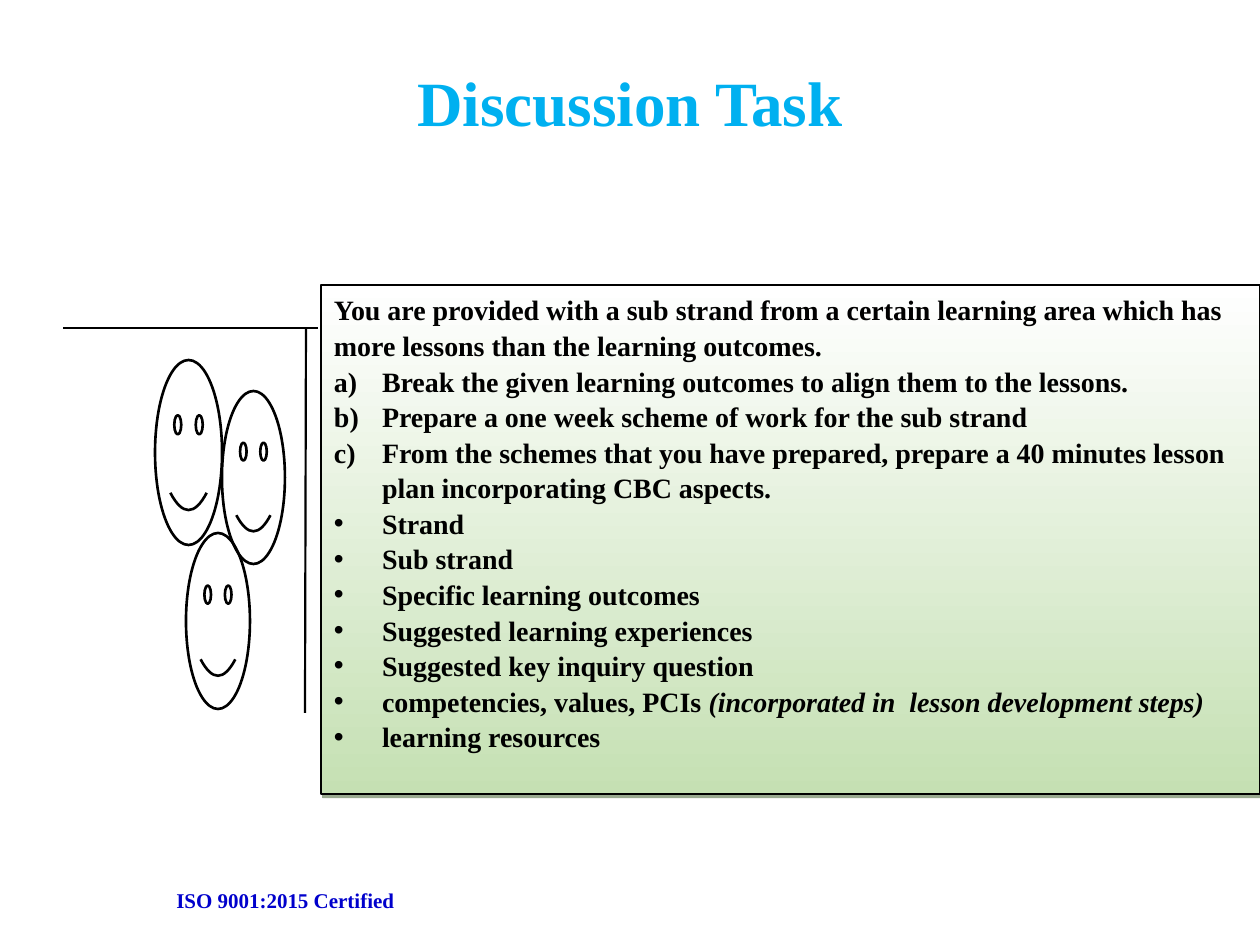
from lxml import etree
from pptx import Presentation
from pptx import util as u
from pptx.dml.color import RGBColor
from pptx.enum import shapes, text
from pptx.oxml.ns import qn

SCALE = 914400 / 126
BLACK = "000000"
TASKS = [
    "Break the given learning outcomes to align them to the lessons.",
    "Prepare a one week scheme of work for the sub strand",
    "From the schemes that you have prepared, prepare a 40 minutes lesson plan incorporating CBC aspects.",
]
PLAN_PARTS = [
    "Strand",
    "Sub strand",
    "Specific learning outcomes",
    "Suggested learning experiences",
    "Suggested key inquiry question",
    ("competencies, values, PCIs ", "(incorporated in  lesson development steps)"),
    "learning resources",
]
FACES = [(155, 360, 67, 185), (222, 391, 63, 173), (186, 533, 64, 176)]
EASEL_LINES = [(306, 328, 305, 713), (318, 328, 63, 328)]


def px(*lengths):
    return [u.Emu(round(length * SCALE)) for length in lengths]


def color(value):
    return RGBColor.from_string(value)


def apply(target, values):
    for name, value in values.items():
        setattr(target, name, value)


class Page:
    def __init__(self, deck):
        self.page = deck.slides.add_slide(deck.slide_layouts[5])
        self.font = {"name": "Times New Roman", "bold": True}

    def add_span(self, para, words, size, ink=BLACK, italic=False):
        span = para.add_run()
        span.text = words
        apply(span.font, {**self.font, "size": u.Pt(size), "italic": italic})
        span.font.color.rgb = color(ink)

    def title(self, words, place):
        box = self.page.shapes.title
        apply(box, dict(zip(("left", "top", "width", "height"), px(*place))))
        box.text_frame.vertical_anchor = text.MSO_ANCHOR.MIDDLE
        para = box.text_frame.paragraphs[0]
        para.alignment = text.PP_ALIGN.CENTER
        self.add_span(para, words, 36, "00B0F0")

    def label(self, words, place):
        box = self.page.shapes.add_textbox(*px(*place))
        box.text_frame.word_wrap = True
        self.add_span(box.text_frame.paragraphs[0], words, 12, "0000CC")

    def shape(self, kind, place, width):
        shape = self.page.shapes.add_shape(kind, *px(*place))
        shape.shadow.inherit = False
        shape.line.color.rgb = color(BLACK)
        shape.line.width = u.Pt(width)
        return shape

    def face(self, place):
        face = self.shape(shapes.MSO_SHAPE.SMILEY_FACE, place, 1.5)
        face.fill.background()
        face.adjustments[0] = 0.05

    def line(self, ends):
        line = self.page.shapes.add_connector(shapes.MSO_CONNECTOR.STRAIGHT, *px(*ends))
        line.line.color.rgb = color(BLACK)
        line.line.width = u.Pt(1.25)
        etree.SubElement(line._element.spPr, qn("a:effectLst"))

    def panel(self, place):
        panel = self.shape(shapes.MSO_SHAPE.RECTANGLE, place, 0.75)
        panel.fill.gradient()
        panel.fill.gradient_angle = 270
        for stop, position, tint in zip(panel.fill.gradient_stops, (0, 1), ("FFFFFF", "C5E0B3")):
            stop.position = position
            stop.color.rgb = color(tint)
        effects = panel._element.spPr.find(qn("a:effectLst"))
        shadow = etree.SubElement(effects, qn("a:outerShdw"), blurRad="0", dist=str(u.Pt(2.2)),
                                  dir=str(63 * 60000), algn="ctr", rotWithShape="0")
        shade = etree.SubElement(shadow, qn("a:srgbClr"), val="375623")
        etree.SubElement(shade, qn("a:alpha"), val="50000")
        margin, top = px(13, 6)
        apply(panel.text_frame, {
            "word_wrap": True, "vertical_anchor": text.MSO_ANCHOR.TOP,
            "margin_left": margin, "margin_right": margin,
            "margin_top": top, "margin_bottom": top,
        })
        return panel.text_frame

    def paragraph(self, para, words, tag=None, **mark):
        apply(para, {"alignment": text.PP_ALIGN.LEFT, "line_spacing": 1.06})
        if tag:
            indent = px(48)[0]
            props = para._p.get_or_add_pPr()
            for name, value in {"marL": indent, "indent": -indent}.items():
                props.set(name, str(value))
            if tag == "a:buChar":
                etree.SubElement(props, qn("a:buFont"), typeface="Arial")
            etree.SubElement(props, qn(tag), **mark)
        parts = (words,) if isinstance(words, str) else words
        for index, part in enumerate(parts):
            self.add_span(para, part, 16, italic=index > 0)


def main():
    deck = Presentation()
    deck.slide_width, deck.slide_height = px(1260, 945)
    page = Page(deck)
    page.label("ISO 9001:2015 Certified", (164, 881, 654, 38))
    page.title("Discussion Task", (63, 38, 1134, 126))
    frame = page.panel((321, 285, 939, 509))
    page.paragraph(
        frame.paragraphs[0],
        "You are provided with a sub strand from a certain learning area which has "
        "more lessons than the learning outcomes.",
    )
    for task in TASKS:
        page.paragraph(frame.add_paragraph(), task, "a:buAutoNum", type="alphaLcParenR")
    for part in PLAN_PARTS:
        page.paragraph(frame.add_paragraph(), part, "a:buChar", char="•")
    for ends in EASEL_LINES:
        page.line(ends)
    for place in FACES:
        page.face(place)
    deck.save("out.pptx")


if __name__ == "__main__":
    main()
